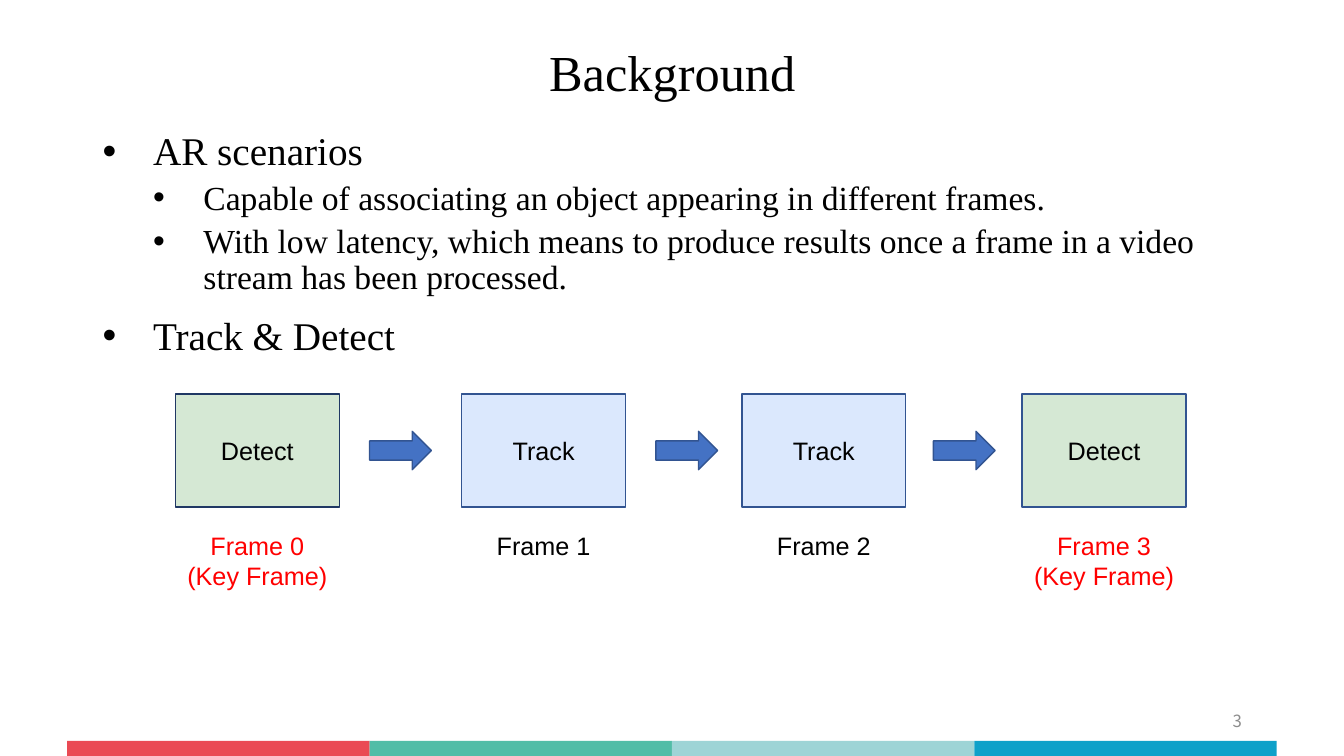
from dataclasses import dataclass
from typing import Optional

from lxml.etree import SubElement
from pptx import Presentation
from pptx.dml.color import RGBColor
from pptx.enum.shapes import MSO_SHAPE
from pptx.enum.text import MSO_ANCHOR, MSO_AUTO_SIZE, PP_ALIGN
from pptx.oxml.ns import qn
from pptx.shapes.autoshape import Shape
from pptx.slide import Slide
from pptx.text.text import TextFrame
from pptx.util import Inches, Pt


@dataclass(frozen=True)
class Theme:
    serif: str = "Times New Roman"
    sans: str = "Arial"
    cjk: str = "Noto Sans CJK SC"
    black: str = "000000"
    red: str = "FF0000"
    gray: str = "8C8C8C"
    green: str = "D5E8D4"
    pale: str = "DBE8FD"
    blue: str = "4472C4"
    edge: str = "325491"
    navy: str = "203864"
    bars: tuple[str, ...] = ("EA4A54", "52BDA7", "9ED4D6", "0EA1C9")
    title: int = 36
    head: int = 28
    point: int = 24
    label: int = 18
    small: int = 12


@dataclass(frozen=True)
class Area:
    col: float
    row: float
    cols: float
    rows: float


@dataclass(frozen=True)
class Step:
    col: float
    name: str
    frame: str
    fill: str
    line: str
    ink: str


@dataclass(frozen=True)
class Point:
    text: str
    level: int = 0


THEME = Theme()
WIDTH, HEIGHT = Inches(13.333), Inches(7.5)
COL, ROW = WIDTH / 100, HEIGHT / 100
LEFT, SPAN = 6.9, 86.25
BOX_ROW, BOX_COLS, BOX_ROWS = 52.13, 12.2, 14.93
ARROW_COLS, ARROW_ROWS = 4.6, 5.07

STEPS = [
    Step(13.05, "Detect", "Frame 0\n(Key Frame)", THEME.green, THEME.navy, THEME.red),
    Step(34.35, "Track", "Frame 1", THEME.pale, THEME.edge, THEME.black),
    Step(55.2, "Track", "Frame 2", THEME.pale, THEME.edge, THEME.black),
    Step(76.05, "Detect", "Frame 3\n(Key Frame)", THEME.green, THEME.edge, THEME.red),
]
ARROWS = (27.5, 48.8, 69.45)
NEEDS = [
    Point("AR scenarios"),
    Point("Capable of associating an object appearing in different frames.", 1),
    Point("With low latency, which means to produce results once a frame "
          "in a video stream has been processed.", 1),
]


def place(area: Area) -> tuple[int, int, int, int]:
    return (round(area.col * COL), round(area.row * ROW),
            round(area.cols * COL), round(area.rows * ROW))


def style(frame: TextFrame, font: str, size: int, ink: str, align: PP_ALIGN) -> None:
    for para in frame.paragraphs:
        para.alignment = align
        for run in para.runs:
            run.font.name = font
            run.font.size = Pt(size)
            run.font.color.rgb = RGBColor.from_string(ink)


def add_block(slide: Slide, kind: MSO_SHAPE, area: Area, fill: str,
              line: Optional[str] = None) -> Shape:
    block = slide.shapes.add_shape(kind, *place(area))
    block.shadow.inherit = False
    block.fill.solid()
    block.fill.fore_color.rgb = RGBColor.from_string(fill)
    if line:
        block.line.color.rgb = RGBColor.from_string(line)
        block.line.width = Pt(1)
    else:
        block.line.fill.background()
    return block


def add_text(slide: Slide, area: Area, text: str, wrap: bool = True) -> TextFrame:
    frame = slide.shapes.add_textbox(*place(area)).text_frame
    frame.word_wrap = wrap
    frame.text = text
    return frame


def add_list(slide: Slide, area: Area, points: list[Point]) -> None:
    frame = add_text(slide, area, "\n".join(point.text for point in points))
    style(frame, THEME.serif, THEME.head, THEME.black, PP_ALIGN.LEFT)
    for rank, (para, point) in enumerate(zip(frame.paragraphs, points)):
        props = para._p.get_or_add_pPr()
        props.set("marL", str(Inches(0.5 * (point.level + 1))))
        props.set("indent", str(Inches(-0.5)))
        SubElement(props, qn("a:buFont")).set("typeface", THEME.sans)
        SubElement(props, qn("a:buChar")).set("char", "•")
        para.level = point.level
        para.line_spacing = 0.9
        if rank:
            para.space_before = Pt(5)
        if point.level:
            para.runs[0].font.size = Pt(THEME.point)


def add_title(slide: Slide) -> None:
    title = slide.shapes.title
    title.left, title.top, title.width, title.height = place(Area(LEFT, 5.33, SPAN, 9.33))
    frame = title.text_frame
    frame.text = "Background"
    frame.auto_size = MSO_AUTO_SIZE.NONE
    frame.vertical_anchor = MSO_ANCHOR.MIDDLE
    style(frame, THEME.serif, THEME.title, THEME.black, PP_ALIGN.CENTER)
    frame.paragraphs[0].line_spacing = 0.9


def add_step(slide: Slide, step: Step) -> None:
    area = Area(step.col, BOX_ROW, BOX_COLS, BOX_ROWS)
    frame = add_block(slide, MSO_SHAPE.RECTANGLE, area, step.fill, step.line).text_frame
    frame.text = step.name
    frame.vertical_anchor = MSO_ANCHOR.MIDDLE
    style(frame, THEME.sans, THEME.label, THEME.black, PP_ALIGN.CENTER)
    cols, rows = (12, 9.47) if "\n" in step.frame else (8.55, 5.33)
    spot = Area(step.col + (BOX_COLS - cols) / 2, 69.47, cols, rows)
    note = add_text(slide, spot, step.frame, wrap=False)
    note.auto_size = MSO_AUTO_SIZE.SHAPE_TO_FIT_TEXT
    style(note, THEME.sans, THEME.label, step.ink, PP_ALIGN.CENTER)


def main() -> None:
    deck = Presentation()
    deck.slide_width, deck.slide_height = WIDTH, HEIGHT
    slide = deck.slides.add_slide(deck.slide_layouts[5])
    for rank, fill in enumerate(THEME.bars):
        add_block(slide, MSO_SHAPE.RECTANGLE, Area(5 + 22.5 * rank, 98, 22.5, 2), fill)
    add_title(slide)
    add_list(slide, Area(LEFT, 16.8, SPAN, 23.73), NEEDS)
    add_list(slide, Area(LEFT, 41.2, SPAN, 6.67), [Point("Track & Detect")])
    for step in STEPS:
        add_step(slide, step)
    row = BOX_ROW + (BOX_ROWS - ARROW_ROWS) / 2
    for col in ARROWS:
        area = Area(col, row, ARROW_COLS, ARROW_ROWS)
        add_block(slide, MSO_SHAPE.RIGHT_ARROW, area, THEME.blue, THEME.edge)
    page = add_text(slide, Area(70.65, 92.67, 22.5, 5.33), "3")
    page.vertical_anchor = MSO_ANCHOR.MIDDLE
    style(page, THEME.cjk, THEME.small, THEME.gray, PP_ALIGN.RIGHT)
    deck.save("out.pptx")


if __name__ == "__main__":
    main()
